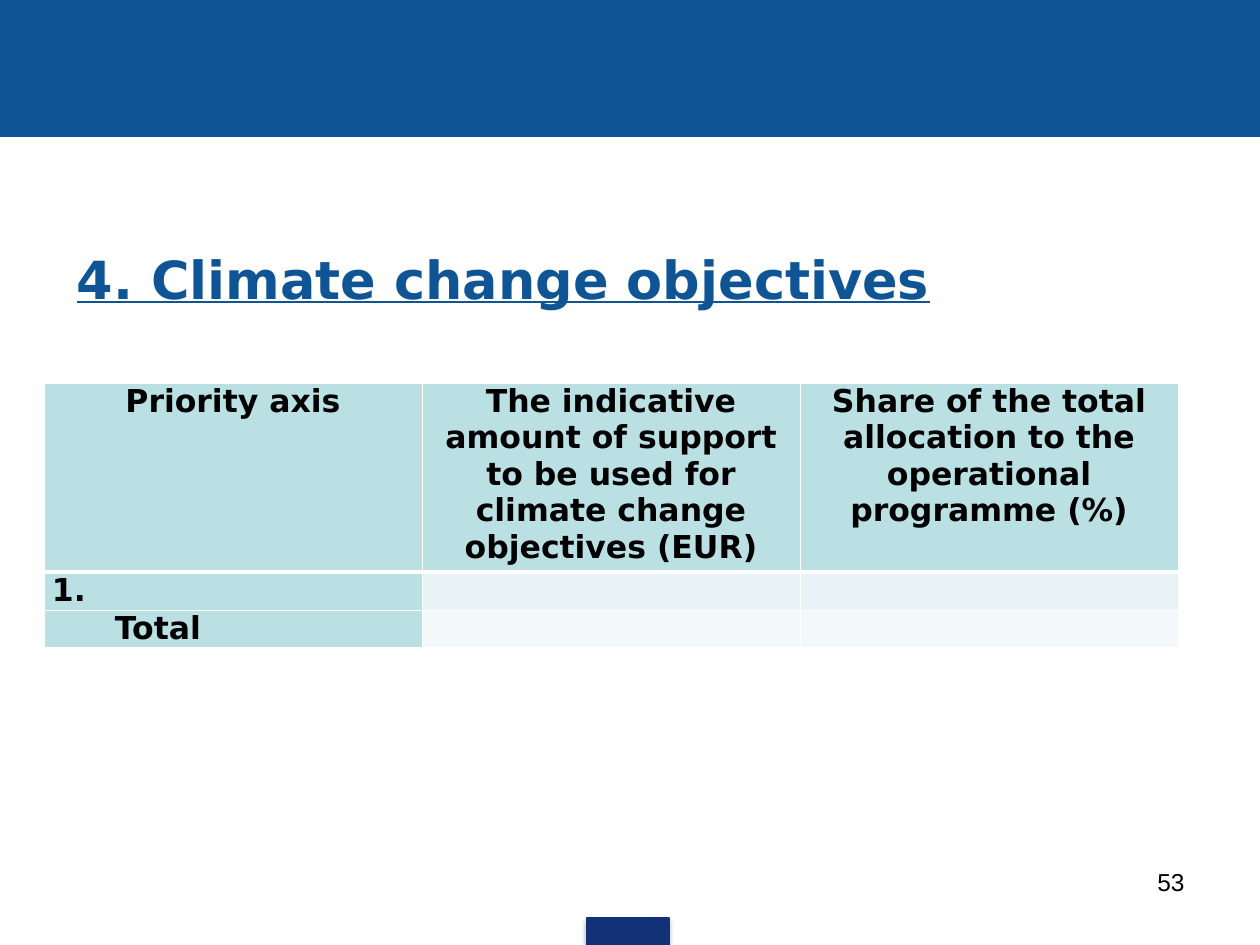
from lxml.etree import SubElement
from pptx import Presentation
from pptx.dml.color import RGBColor
from pptx.enum.shapes import MSO_SHAPE
from pptx.enum.text import MSO_ANCHOR, MSO_AUTO_SIZE, PP_ALIGN
from pptx.oxml import parse_xml
from pptx.oxml.ns import nsdecls, qn
from pptx.util import Emu, Pt

TITLE = "4. Climate change objectives"
PAGE = "53"
ROWS = [
    ["Priority axis",
     "The indicative amount of support to be used for climate change objectives (EUR)",
     "Share of the total allocation to the operational programme (%)"],
    ["1.", "", ""],
    ["Total", "", ""],
]
COLORS = {"blue": "0F5494", "navy": "133176", "head": "BBE0E3", "band": "E7F3F4",
          "light": "F3F9FA", "white": "FFFFFF", "black": "000000"}
ROW_FILLS = ["head", "band", "light"]
ROW_HEIGHTS = [182, 36, 37]
COL_WIDTH = 378
FONT = "DejaVu Sans"


def px(n):
    return Emu(round(n * 914400 / 126))


def rgb(name):
    return RGBColor.from_string(COLORS[name])


def style(p, size, color, font=FONT, bold=False):
    for r in p.runs:
        r.font.size, r.font.name, r.font.bold = Pt(size), font, bold
        r.font.color.rgb = rgb(color)


def add_bar(s, box, color):
    bar = s.shapes.add_shape(MSO_SHAPE.RECTANGLE, *map(px, box))
    bar.shadow.inherit = False
    bar.fill.solid()
    bar.fill.fore_color.rgb = rgb(color)
    bar.line.color.rgb = rgb(color)
    bar.line.width = Pt(0.75)
    return bar


def set_borders(cell, bottom):
    tcPr = cell._tc.get_or_add_tcPr()
    widths = {"lnL": 0.5, "lnR": 0.5, "lnT": 0.5, "lnB": bottom}
    for i, (side, width) in enumerate(widths.items()):
        tcPr.insert(i, parse_xml(
            f'<a:{side} {nsdecls("a")} w="{Pt(width)}"><a:solidFill>'
            f'<a:srgbClr val="{COLORS["white"]}"/></a:solidFill></a:{side}>'))


prs = Presentation()
prs.slide_width, prs.slide_height = px(1260), px(945)
s = prs.slides.add_slide(prs.slide_layouts[5])

add_bar(s, (0, 0, 1260, 136), "blue")
badge = add_bar(s, (587, 918, 82, 28), "navy")
effects = badge._element.spPr.find(qn("a:effectLst"))
effects.append(parse_xml(
    f'<a:outerShdw {nsdecls("a")} blurRad="{Pt(3.1)}" dist="{Pt(1.8)}" dir="5400000">'
    f'<a:srgbClr val="{COLORS["black"]}"><a:alpha val="35000"/></a:srgbClr></a:outerShdw>'))

title = s.shapes.title
title.left, title.top, title.width, title.height = map(px, (64, 214, 1134, 129))
tf = title.text_frame
tf.text = TITLE
tf.auto_size = MSO_AUTO_SIZE.NONE
tf.vertical_anchor = MSO_ANCHOR.MIDDLE
p = tf.paragraphs[0]
p.alignment = PP_ALIGN.LEFT
pPr = p._p.get_or_add_pPr()
pPr.set("marL", str(px(49)))
pPr.set("indent", str(-px(49)))
style(p, 30, "blue", bold=True)
p.runs[0].font.underline = True

number = s.shapes.add_textbox(*map(px, (903, 861, 294, 66)))
number.text_frame.word_wrap = True
number.text_frame.text = PAGE
p = number.text_frame.paragraphs[0]
p.alignment = PP_ALIGN.RIGHT
style(p, 14, "black", font="Arial")

frame = s.shapes.add_table(len(ROWS), len(ROWS[0]), px(44), px(383),
                           px(COL_WIDTH * len(ROWS[0])), px(sum(ROW_HEIGHTS)))
table = frame.table
for col in table.columns:
    col.width = px(COL_WIDTH)
for i, row in enumerate(ROWS):
    table.rows[i].height = px(ROW_HEIGHTS[i])
    for j, text in enumerate(row):
        cell = table.cell(i, j)
        cell.margin_left = cell.margin_right = px(8)
        cell.margin_top = cell.margin_bottom = 0
        cell.fill.solid()
        cell.fill.fore_color.rgb = rgb("head" if j == 0 else ROW_FILLS[i])
        set_borders(cell, 3 if i == 0 else 0.5)
        cell.text_frame.text = text
        p = cell.text_frame.paragraphs[0]
        if text:
            p.alignment = PP_ALIGN.CENTER if i == 0 else PP_ALIGN.LEFT
            style(p, 18, "black", bold=True)
        else:
            SubElement(p._p, qn("a:endParaRPr")).set("sz", "1200")
        if text == "Total":
            p._p.get_or_add_pPr().set("marL", str(px(63)))

prs.save("out.pptx")
